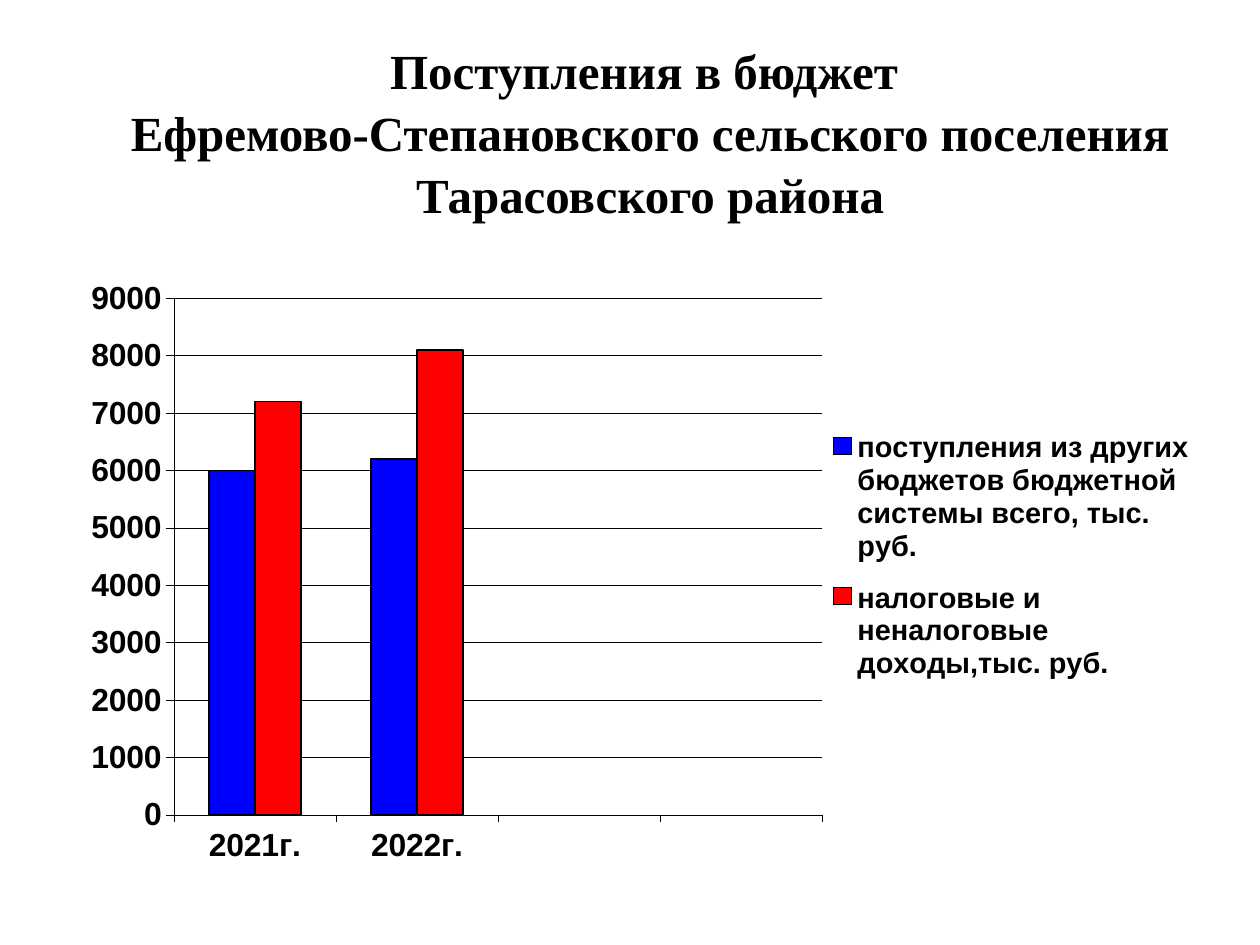
from dataclasses import dataclass

import pptx
import pptx.chart.data
import pptx.dml.color
import pptx.enum.chart
import pptx.enum.text
import pptx.oxml
import pptx.oxml.ns
import pptx.util
from pptx.util import Inches

RGB = pptx.dml.color.RGBColor


@dataclass(frozen=True)
class Theme:
    ink: RGB = RGB(0, 0, 0)
    paper: RGB = RGB(255, 255, 255)
    title_font: str = "Times New Roman"
    chart_font: str = "Arial"
    title_size: float = 28
    axis_size: float = 18.2
    legend_size: float = 16.5
    thin_line: float = 0.25
    bar_line: float = 1


@dataclass(frozen=True)
class Income:
    name: str
    values: tuple
    color: RGB


@dataclass(frozen=True)
class Area:
    """Place within the chart, as fractions of its size."""
    x: float
    y: float
    w: float
    h: float


THEME = Theme()
TITLE_LINES = (
    "Поступления в бюджет ",
    "Ефремово-Степановского сельского поселения",
    "Тарасовского района",
)
YEARS = ("2021г.", "2022г.", "", "")
INCOMES = (
    Income("поступления из других бюджетов бюджетной системы всего, тыс. руб.",
           (6000, 6200, None, None), RGB(0, 0, 255)),
    Income("налоговые и неналоговые доходы,тыс. руб.",
           (7200, 8100, None, None), RGB(255, 0, 0)),
)
PLOT_AREA = Area(0.088, 0.046, 0.573, 0.83)
LEGEND_AREA = Area(0.67, 0.23, 0.32, 0.46)


def style_font(font, name: str, size: float) -> None:
    font.name = name
    font.size = pptx.util.Pt(size)
    font.bold = True
    font.color.rgb = THEME.ink


def style_line(line, width: float) -> None:
    line.color.rgb = THEME.ink
    line.width = pptx.util.Pt(width)


def place(element, area: Area, index: int, inner: bool = False) -> None:
    """Give a plot area or legend a fixed layout, as its child at index."""
    for old in element.findall(pptx.oxml.ns.qn("c:layout")):
        element.remove(old)
    target = '<c:layoutTarget val="inner"/>' if inner else ""
    modes = "".join(f'<c:{side}Mode val="edge"/>' for side in "xy")
    sizes = "".join(f'<c:{side} val="{getattr(area, side)}"/>' for side in "xywh")
    element.insert(index, pptx.oxml.parse_xml(
        f'<c:layout {pptx.oxml.ns.nsdecls("c")}><c:manualLayout>'
        f"{target}{modes}{sizes}</c:manualLayout></c:layout>"))


def add_title(slide) -> None:
    title = slide.shapes.title
    title.left, title.top = Inches(0.66), Inches(0.25)
    title.width, title.height = Inches(9), Inches(1.81)
    frame = title.text_frame
    frame.text = "\n".join(TITLE_LINES)
    frame.word_wrap = True
    frame.auto_size = pptx.enum.text.MSO_AUTO_SIZE.NONE
    frame.vertical_anchor = pptx.enum.text.MSO_ANCHOR.TOP
    for para in frame.paragraphs:
        para.alignment = pptx.enum.text.PP_ALIGN.CENTER
        para.line_spacing = 1.05
        style_font(para.font, THEME.title_font, THEME.title_size)


def style_axes(chart) -> None:
    for axis in (chart.category_axis, chart.value_axis):
        axis.major_tick_mark = pptx.enum.chart.XL_TICK_MARK.OUTSIDE
        axis.minor_tick_mark = pptx.enum.chart.XL_TICK_MARK.NONE
        style_font(axis.tick_labels.font, THEME.chart_font, THEME.axis_size)
        style_line(axis.format.line, THEME.thin_line)
    chart.category_axis.tick_label_position = pptx.enum.chart.XL_TICK_LABEL_POSITION.LOW
    scale = chart.value_axis
    scale.minimum_scale, scale.maximum_scale, scale.major_unit = 0, 9000, 1000
    scale.tick_labels.number_format = "General"
    scale.tick_labels.number_format_is_linked = False
    scale.has_major_gridlines = True
    style_line(scale.major_gridlines.format.line, THEME.thin_line)


def add_income_chart(slide) -> None:
    data = pptx.chart.data.CategoryChartData()
    data.categories = YEARS
    for income in INCOMES:
        data.add_series(income.name, income.values)
    chart = slide.shapes.add_chart(
        pptx.enum.chart.XL_CHART_TYPE.COLUMN_CLUSTERED,
        Inches(0.59), Inches(2.14), Inches(8.98), Inches(4.94), data).chart
    chart.has_title = False
    style_font(chart.font, THEME.chart_font, THEME.axis_size)
    style_axes(chart)

    plot = chart.plots[0]
    plot.gap_width, plot.overlap = 150, 0
    plot.vary_by_categories = False
    for series, income in zip(plot.series, INCOMES):
        series.format.fill.solid()
        series.format.fill.fore_color.rgb = income.color
        style_line(series.format.line, THEME.bar_line)

    chart.has_legend = True
    chart.legend.position = pptx.enum.chart.XL_LEGEND_POSITION.RIGHT
    chart.legend.include_in_layout = False
    style_font(chart.legend.font, THEME.chart_font, THEME.legend_size)
    place(chart.element.xpath(".//c:plotArea")[0], PLOT_AREA, 0, inner=True)
    place(chart.element.xpath(".//c:legend")[0], LEGEND_AREA, 1)


def main() -> None:
    deck = pptx.Presentation()
    deck.slide_width, deck.slide_height = Inches(10), Inches(7.5)
    slide = deck.slides.add_slide(deck.slide_layouts.get_by_name("Title Only"))
    slide.background.fill.solid()
    slide.background.fill.fore_color.rgb = THEME.paper
    add_title(slide)
    add_income_chart(slide)
    deck.save("out.pptx")


if __name__ == "__main__":
    main()
